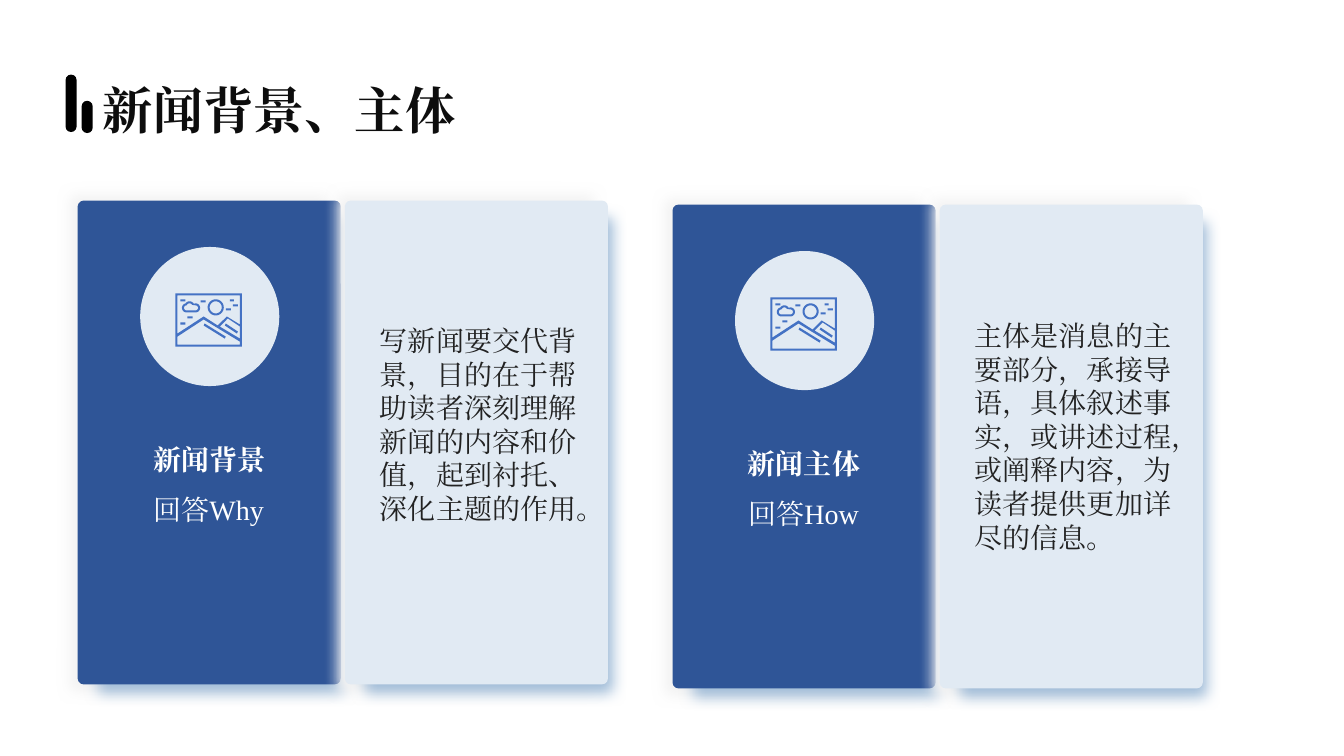
import math
from dataclasses import dataclass

import lxml.etree
import pptx
import pptx.dml.color
import pptx.enum.lang
import pptx.enum.shapes
import pptx.enum.text
import pptx.oxml.ns
import pptx.util

TITLE = "新闻背景、主体"
CARDS = [
    ("新闻背景", "回答Why", 3.16, 2.12,
     "写新闻要交代背景，目的在于帮助读者深刻理解新闻的内容和价值，起到衬托、深化主题的作用。"),
    ("新闻主体", "回答How", 3.11, 2.46,
     "主体是消息的主要部分，承接导语，具体叙述事实，或讲述过程，或阐释内容，为读者提供更加详尽的信息。"),
]
TITLE_BARS = [(0.65, 0.74, 0.11, 0.57), (0.81, 1.0, 0.11, 0.32)]

SLIDE_WIDTH, SLIDE_HEIGHT = 13.33, 7.5
CARD_LEFT, CARD_TOP = 0.77, 1.99
CARD_STEP_X, CARD_STEP_Y = 5.9, 0.04
PANEL_WIDTH, PANEL_HEIGHT, PANEL_STEP = 2.61, 4.8, 2.65
GLOW_OFFSETS = (-0.21, -0.19, 2.82, 5.19)
SHADE_OFFSETS = (0.06, 0.03, 2.73, 4.99)

ICON_DASHES = [(5, 29, 5), (12, 23, 5), (50, 15, 5), (57, 11, 5),
               (25, 7, 5), (54, 6, 4), (5, 6, 5)]
ICON_OUTLINES = [
    [(0, 0), (66, 0), (66, 53), (0, 53)],
    [(2, 2), (2, 40), (28, 23), (42, 32), (51, 23), (64, 31), (64, 2)],
    [(28, 26), (2, 43), (2, 51), (64, 51), (64, 48), (41, 34)],
    [(52, 25), (44, 33), (64, 45), (64, 33)],
    [(50, 30), (62, 38), (61, 40), (49, 32)],
    [(29, 30), (50, 43), (49, 45), (28, 32)],
]
SUN = (40, 14)
CLOUD_ARCS = [(14, 13, 5, 200, 330), (20, 14.5, 4.5, 270, 450),
              (11, 14.5, 4.5, 90, 260)]


@dataclass(frozen=True)
class Theme:
    font: str = "Times New Roman"
    title_size: int = 36
    text_size: int = 20
    title: str = "0D0D0D"
    body: str = "222222"
    white: str = "FFFFFF"
    bar: str = "000000"
    navy: str = "2F5597"
    pale: str = "E1EAF3"
    glow: str = "F2F2F2"
    shade: str = "A0BCD8"
    icon: str = "4472C4"
    corner: float = 0.023
    soft_radius: int = 127000


THEME = Theme()
SHAPES = pptx.enum.shapes.MSO_SHAPE
ALIGN = pptx.enum.text.PP_ALIGN


def inches(box):
    return [pptx.util.Inches(length) for length in box]


def paint(shape, color):
    shape.shadow.inherit = False
    shape.fill.solid()
    shape.fill.fore_color.rgb = pptx.dml.color.RGBColor.from_string(color)
    shape.line.fill.background()


def add_block(slide, kind, box, color, corner=None):
    shape = slide.shapes.add_shape(kind, *inches(box))
    if corner is not None:
        shape.adjustments[0] = corner
    paint(shape, color)
    return shape


def soften(shape):
    effects = shape._element.spPr.find(pptx.oxml.ns.qn("a:effectLst"))
    lxml.etree.SubElement(effects, pptx.oxml.ns.qn("a:softEdge"),
                          rad=str(THEME.soft_radius))


def add_panel(slide, left, top, color):
    for offsets, tint in ((GLOW_OFFSETS, THEME.glow), (SHADE_OFFSETS, THEME.shade)):
        x, y, width, height = offsets
        soften(add_block(slide, SHAPES.ROUNDED_RECTANGLE,
                         (left + x, top + y, width, height), tint, THEME.corner))
    add_block(slide, SHAPES.ROUNDED_RECTANGLE,
              (left, top, PANEL_WIDTH, PANEL_HEIGHT), color, THEME.corner)


def add_text(slide, box, text, size, color, bold=False, align=ALIGN.LEFT):
    frame = slide.shapes.add_textbox(*inches(box)).text_frame
    frame.word_wrap = True
    paragraph = frame.paragraphs[0]
    paragraph.alignment = align
    run = paragraph.add_run()
    run.text = text
    font = run.font
    font.name = THEME.font
    font.size = pptx.util.Pt(size)
    font.bold = bold
    font.color.rgb = pptx.dml.color.RGBColor.from_string(color)
    font.language_id = pptx.enum.lang.MSO_LANGUAGE_ID.SIMPLIFIED_CHINESE
    latin = run._r.rPr.find(pptx.oxml.ns.qn("a:latin"))
    east_asian = lxml.etree.Element(pptx.oxml.ns.qn("a:ea"), typeface=THEME.font)
    latin.addnext(east_asian)
    return frame


def arc(x, y, radius, start, end, steps=16):
    angles = [math.radians(start + (end - start) * i / steps) for i in range(steps + 1)]
    return [(x + radius * math.cos(a), y + radius * math.sin(a)) for a in angles]


def cloud(inset):
    return [point for x, y, radius, start, end in CLOUD_ARCS
            for point in arc(x, y, radius - inset, start, end)]


def add_landscape_icon(slide, left, top):
    outlines = list(ICON_OUTLINES)
    outlines += [[(x, y), (x + width, y), (x + width, y + 2), (x, y + 2)]
                 for x, y, width in ICON_DASHES]
    outlines += [arc(*SUN, radius, 0, 360, 40) for radius in (8, 6)]
    outlines += [cloud(inset) for inset in (0, 2)]
    scale = 100
    unit = pptx.util.Inches(0.01) / scale
    outlines = [[(round(x * scale), round(y * scale)) for x, y in outline]
                for outline in outlines]
    builder = slide.shapes.build_freeform(*outlines[0][0], scale=unit)
    builder.add_line_segments(outlines[0][1:], close=True)
    for outline in outlines[1:]:
        builder.move_to(*outline[0])
        builder.add_line_segments(outline[1:], close=True)
    paint(builder.convert_to_shape(*inches((left, top))), THEME.icon)


def add_card(slide, index, card):
    heading, answer, body_top, body_height, body = card
    x, y = index * CARD_STEP_X, index * CARD_STEP_Y
    left, top = CARD_LEFT + x, CARD_TOP + y
    add_panel(slide, left, top, THEME.navy)
    add_block(slide, SHAPES.OVAL, (left + 0.62, top + 0.46, 1.38, 1.38), THEME.pale)
    add_panel(slide, left + PANEL_STEP, top, THEME.pale)
    add_text(slide, (left + 0.34, top + 2.35, 1.93, 0.44), heading,
             THEME.text_size, THEME.white, True, ALIGN.CENTER)
    add_text(slide, (left + 0.17, top + 2.85, 2.26, 0.44), answer,
             THEME.text_size, THEME.white, align=ALIGN.CENTER)
    add_text(slide, (left + 2.9, body_top, 2.26, body_height), body,
             THEME.text_size, THEME.body)
    add_landscape_icon(slide, left + 0.97, top + 0.92)


def main():
    presentation = pptx.Presentation()
    presentation.slide_width, presentation.slide_height = inches((SLIDE_WIDTH, SLIDE_HEIGHT))
    slide = presentation.slides.add_slide(presentation.slide_layouts[6])
    for box in TITLE_BARS:
        add_block(slide, SHAPES.ROUNDED_RECTANGLE, box, THEME.bar, 0.5)
    title = add_text(slide, (0.92, 0.4, 11.5, 1.45), TITLE,
                     THEME.title_size, THEME.title, True)
    title.vertical_anchor = pptx.enum.text.MSO_ANCHOR.MIDDLE
    title.paragraphs[0].line_spacing = 0.9
    for index, card in enumerate(CARDS):
        add_card(slide, index, card)
    presentation.save("out.pptx")


if __name__ == "__main__":
    main()
